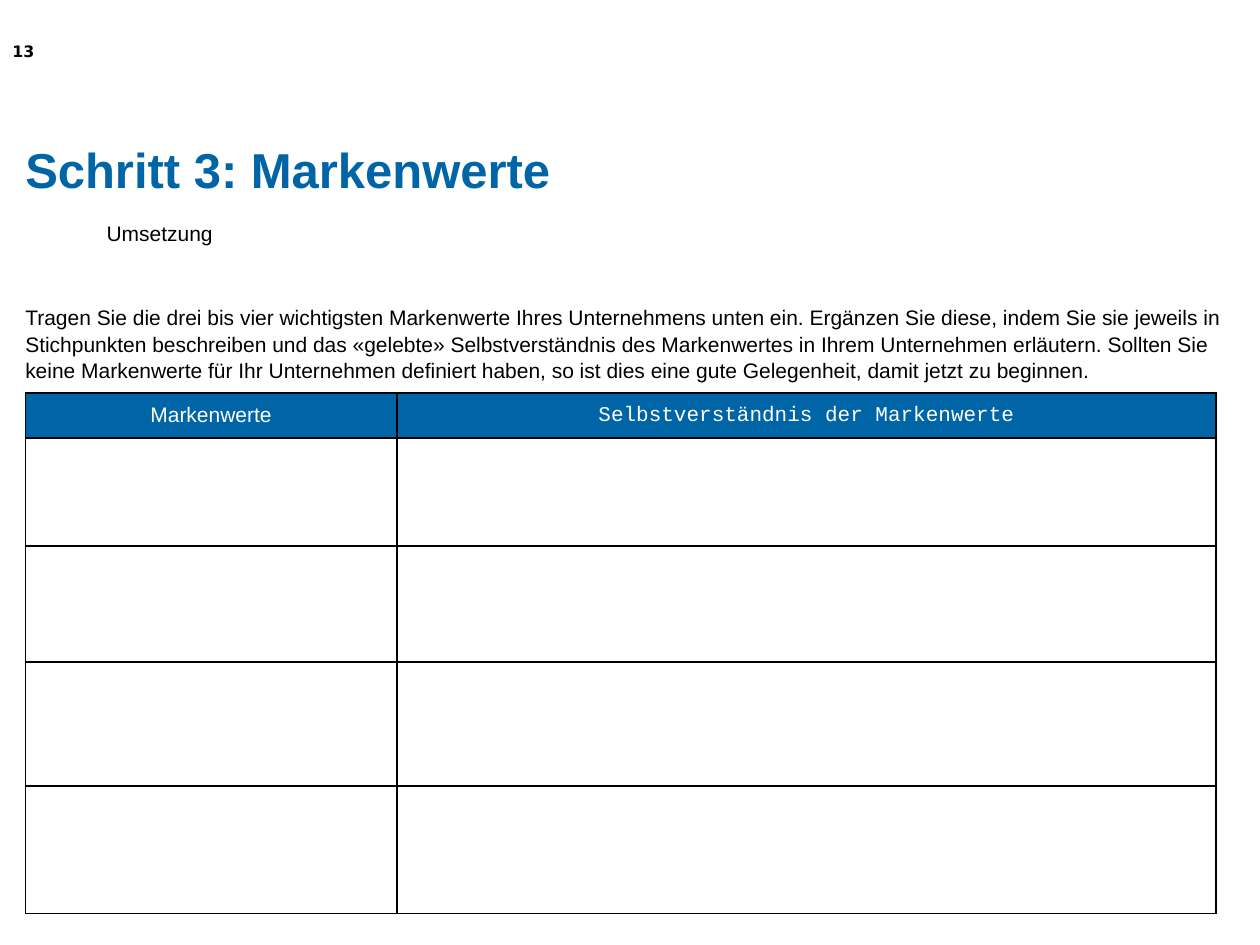
"""Builds the brand values worksheet slide."""
from lxml import etree
from pptx import Presentation
from pptx import util as u
from pptx.dml.color import RGBColor
from pptx.enum import text
from pptx.oxml import ns

TITLE = "Schritt 3: Markenwerte"
SUBTITLE = "Umsetzung"
PAGE_NUMBER = "13"
TASK = (
    "Tragen Sie die drei bis vier wichtigsten Markenwerte Ihres Unternehmens unten ein. "
    "Ergänzen Sie diese, indem Sie sie jeweils in Stichpunkten beschreiben und das «gelebte» "
    "Selbstverständnis des Markenwertes in Ihrem Unternehmen erläutern. Sollten Sie keine "
    "Markenwerte für Ihr Unternehmen definiert haben, so ist dies eine gute Gelegenheit, "
    "damit jetzt zu beginnen."
)
HEADERS = [("Markenwerte", "Arial"), ("Selbstverständnis der Markenwerte", "Courier New")]
COLUMN_WIDTHS = [7.49, 16.51]
ROW_HEIGHTS = [0.91, 2.18, 2.34, 2.49, 2.57]
LEFT, WIDTH = 0.51, 24.41

THEME = {
    "blue": "0065A6", "black": "000000", "white": "FFFFFF",
    "sans": "Arial", "number": "DejaVu Sans",
    "title_size": 28, "text_size": 12, "number_size": 9, "border": 1,
}


def place(box, left, top, width, height):
    box.left, box.top, box.width, box.height = map(u.Cm, (left, top, width, height))


def write(frame, words, size, color, font=THEME["sans"], bold=False, align=text.PP_ALIGN.LEFT):
    frame.text = words
    para = frame.paragraphs[0]
    para.alignment = align
    for span in para.runs:
        span.font.name = font
        span.font.size = u.Pt(size)
        span.font.bold = bold
        span.font.color.rgb = RGBColor.from_string(color)
    return para


def fill_placeholder(box, area, anchor, words, size, color, bold=False):
    place(box, *area)
    frame = box.text_frame
    frame.margin_left = frame.margin_right = frame.margin_top = frame.margin_bottom = 0
    frame.auto_size = text.MSO_AUTO_SIZE.NONE
    frame.vertical_anchor = anchor
    return write(frame, words, size, color, bold=bold)


def add_label(page, area, words, size, font, bold=False, wrap=True):
    box = page.shapes.add_textbox(*map(u.Cm, area))
    box.text_frame.word_wrap = wrap
    write(box.text_frame, words, size, THEME["black"], font, bold)
    return box


def format_cell(cell, fill):
    properties = cell._tc.get_or_add_tcPr()
    for side in ("lnL", "lnR", "lnT", "lnB"):
        line = etree.SubElement(properties, ns.qn(f"a:{side}"), w=str(u.Pt(THEME["border"])))
        solid = etree.SubElement(line, ns.qn("a:solidFill"))
        etree.SubElement(solid, ns.qn("a:srgbClr"), val=THEME["black"])
    cell.fill.solid()
    cell.fill.fore_color.rgb = RGBColor.from_string(fill)


def add_value_table(page):
    area = (LEFT, 7.92, sum(COLUMN_WIDTHS), sum(ROW_HEIGHTS))
    table = page.shapes.add_table(len(ROW_HEIGHTS), len(COLUMN_WIDTHS), *map(u.Cm, area)).table
    table.first_row = table.horz_banding = False
    for column, width in zip(table.columns, COLUMN_WIDTHS):
        column.width = u.Cm(width)
    for index, (row, height) in enumerate(zip(table.rows, ROW_HEIGHTS)):
        row.height = u.Cm(height)
        for cell in row.cells:
            format_cell(cell, THEME["white"] if index else THEME["blue"])
    for cell, (words, font) in zip(table.rows[0].cells, HEADERS):
        cell.vertical_anchor = text.MSO_ANCHOR.MIDDLE
        write(cell.text_frame, words, THEME["text_size"], THEME["white"], font,
              align=text.PP_ALIGN.CENTER)


def main():
    deck = Presentation()
    deck.slide_width, deck.slide_height = u.Cm(25.4), u.Cm(19.05)
    page = deck.slides.add_slide(deck.slide_layouts[1])

    fill_placeholder(page.shapes.title, (LEFT, 2.67, WIDTH, 1.45), text.MSO_ANCHOR.MIDDLE,
                     TITLE, THEME["title_size"], THEME["blue"], bold=True)
    para = fill_placeholder(page.placeholders[1], (LEFT, 6.12, WIDTH, 12.14),
                            text.MSO_ANCHOR.TOP, TASK, THEME["text_size"], THEME["black"])
    para.space_before = u.Pt(0)
    para.line_spacing = 1.05
    properties = para._p.get_or_add_pPr()
    properties.set("marL", "0")
    properties.set("indent", "0")
    etree.SubElement(properties, ns.qn("a:buNone"))

    add_label(page, (0, 0.71, 2.01, 1.19), PAGE_NUMBER, THEME["number_size"],
              THEME["number"], bold=True)
    subtitle = add_label(page, (1.9, 4.32, 2.79, 0.76), SUBTITLE, THEME["text_size"],
                         THEME["sans"], wrap=False)
    subtitle.text_frame.auto_size = text.MSO_AUTO_SIZE.SHAPE_TO_FIT_TEXT
    add_value_table(page)
    deck.save("out.pptx")


if __name__ == "__main__":
    main()
